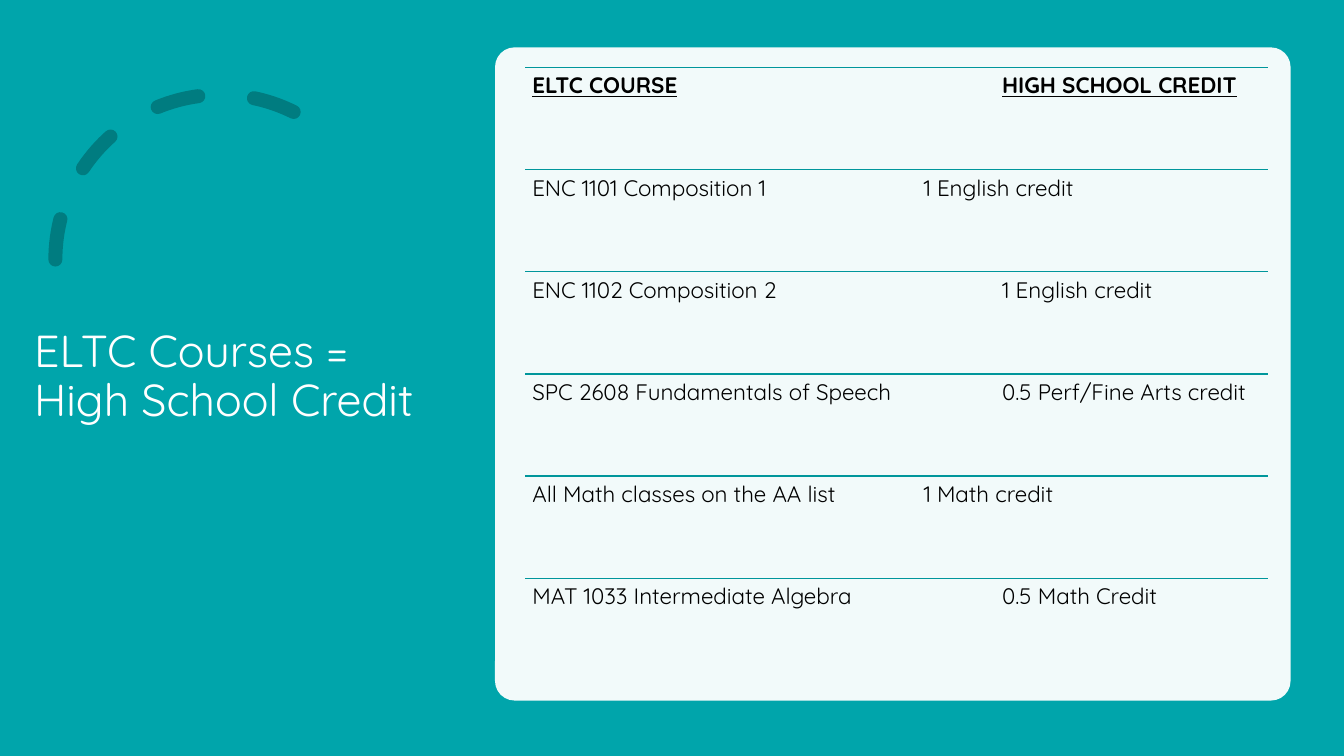
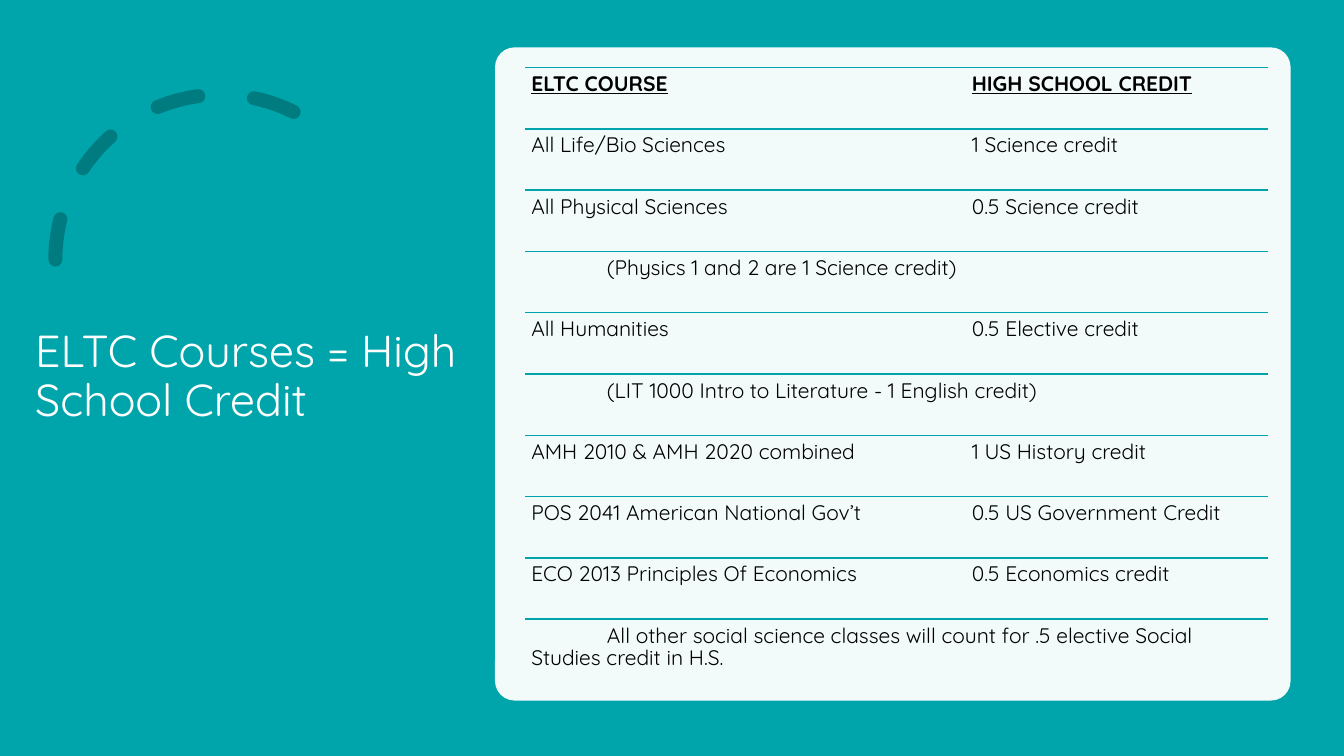
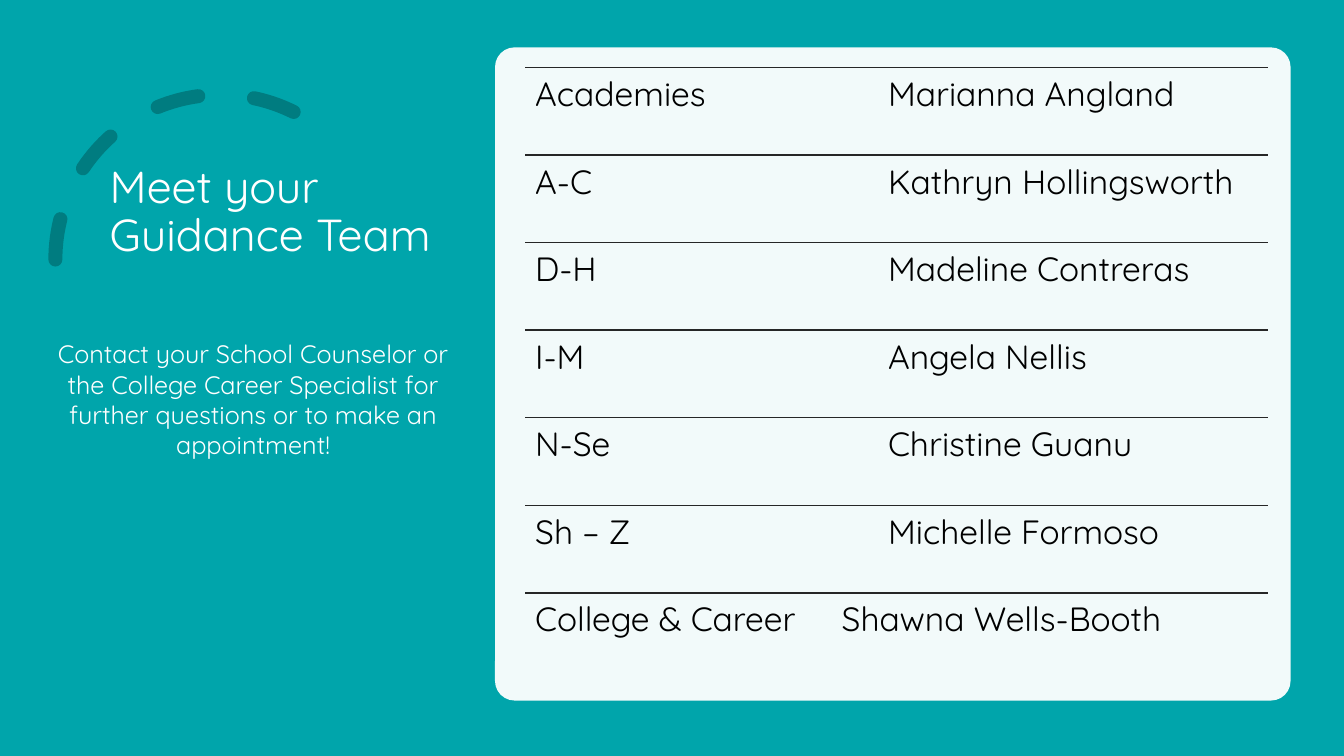
from dataclasses import dataclass

from lxml import etree
from pptx import Presentation
from pptx.dml.color import RGBColor
from pptx.enum.dml import MSO_LINE
from pptx.enum.shapes import MSO_CONNECTOR, MSO_SHAPE
from pptx.enum.text import MSO_ANCHOR, PP_ALIGN
from pptx.oxml.ns import qn
from pptx.util import Inches, Pt

ARC, ROUNDED = MSO_SHAPE.ARC, MSO_SHAPE.ROUNDED_RECTANGLE
STRAIGHT, DASH = MSO_CONNECTOR.STRAIGHT, MSO_LINE.DASH
MIDDLE, TOP = MSO_ANCHOR.MIDDLE, MSO_ANCHOR.TOP
LEFT, CENTER = PP_ALIGN.LEFT, PP_ALIGN.CENTER


@dataclass(frozen=True)
class Theme:
    font: str = "Quicksand"
    teal: RGBColor = RGBColor.from_string("00A5AB")
    dark_teal: RGBColor = RGBColor.from_string("007C80")
    rule_teal: RGBColor = RGBColor.from_string("00969B")
    charcoal: RGBColor = RGBColor.from_string("262626")
    white: RGBColor = RGBColor.from_string("FFFFFF")
    black: RGBColor = RGBColor.from_string("000000")
    title_size: float = 32
    contact_size: float = 18
    line_spacing: float = 0.9


THEME = Theme()
LIST_LEFT, LIST_TOP, LIST_WIDTH, LIST_HEIGHT = 5.21, 0.67, 7.37, 6.08
NOTE_INDENT = 0.75


@dataclass(frozen=True)
class Box:
    left: float
    top: float
    width: float
    height: float

    def lengths(self):
        return tuple(map(Inches, (self.left, self.top, self.width, self.height)))


@dataclass(frozen=True)
class Row:
    """One list entry; column overrides where its second text starts."""
    label: str
    value: str = ""
    column: float | None = None
    header: bool = False
    note: bool = False


@dataclass(frozen=True)
class Page:
    title: str
    title_box: Box
    rows: tuple[Row, ...]
    size: float
    inset: float
    column: float
    rule: RGBColor
    contact: str = ""


HEADER = Row("ELTC COURSE", "HIGH SCHOOL CREDIT", header=True)
COURSES_TITLE = "ELTC Courses = High School Credit"

PAGES = (
    Page(
        COURSES_TITLE, Box(0.24, 0.7, 4.22, 6.09),
        (
            HEADER,
            Row("ENC 1101 Composition 1", "1 English credit", column=3.88),
            Row("ENC 1102 Composition 2", "1 English credit"),
            Row("SPC 2608 Fundamentals of Speech", "0.5 Perf/Fine Arts credit"),
            Row("All Math classes on the AA list", "1 Math credit", column=3.88),
            Row("MAT 1033 Intermediate Algebra", "0.5 Math Credit"),
        ),
        size=16, inset=0.07, column=4.66, rule=THEME.rule_teal,
    ),
    Page(
        COURSES_TITLE, Box(0.25, 0.7, 4.43, 6.09),
        (
            HEADER,
            Row("All Life/Bio Sciences", "1 Science credit"),
            Row("All Physical Sciences", "0.5 Science credit"),
            Row("(Physics 1 and 2 are 1 Science credit)", note=True),
            Row("All Humanities", "0.5 Elective credit"),
            Row("(LIT 1000 Intro to Literature - 1 English credit)", note=True),
            Row("AMH 2010 & AMH 2020 combined", "1 US History credit"),
            Row("POS 2041 American National Gov’t", "0.5 US Government Credit"),
            Row("ECO 2013 Principles Of Economics", "0.5 Economics credit"),
            Row("All other social science classes will count for .5 elective "
                "Social Studies credit in H.S.", note=True),
        ),
        size=15, inset=0.06, column=4.37, rule=THEME.teal,
    ),
    Page(
        "Meet your Guidance Team", Box(0.99, 1.1, 3.77, 2.03),
        (
            Row("Academies", "Marianna Angland"),
            Row("A-C", "Kathryn Hollingsworth"),
            Row("D-H", "Madeline Contreras"),
            Row("I-M", "Angela Nellis"),
            Row("N-Se", "Christine Guanu"),
            Row("Sh – Z", "Michelle Formoso"),
            Row("College & Career", "Shawna Wells-Booth", column=3.04),
        ),
        size=24, inset=0.1, column=3.5, rule=THEME.charcoal,
        contact="Contact your School Counselor or the College Career Specialist "
                "for further questions or to make an appointment!",
    ),
)


def add_text_frame(slide, box: Box, anchor=TOP):
    frame = slide.shapes.add_textbox(*box.lengths()).text_frame
    frame.word_wrap = True
    frame.vertical_anchor = anchor
    return frame


def style_paragraph(paragraph, size: float, color: RGBColor, spacing: float = 1.0) -> None:
    paragraph.line_spacing = spacing
    paragraph.font.name = THEME.font
    paragraph.font.size = Pt(size)
    paragraph.font.color.rgb = color


def add_statement(slide, text: str, box: Box, size: float, spacing: float = 1.0,
                  anchor=TOP, align=LEFT) -> None:
    """Add white text on the teal side of the slide."""
    paragraph = add_text_frame(slide, box, anchor).paragraphs[0]
    paragraph.text = text
    paragraph.alignment = align
    style_paragraph(paragraph, size, THEME.white, spacing)


def add_dashed_arc(slide) -> None:
    arc = slide.shapes.add_shape(ARC, *Box(0.55, 0.94, 3.27, 3.27).lengths())
    arc.shadow.inherit = False
    arc.adjustments[0] = 146.13
    arc.adjustments[1] = 0
    arc.fill.background()
    arc.line.color.rgb = THEME.dark_teal
    arc.line.width = Pt(10)
    arc.line.dash_style = DASH
    properties = arc.element.spPr
    properties.find(qn("a:xfrm")).set("flipH", "1")
    properties.find(qn("a:ln")).set("cap", "rnd")


def add_panel(slide) -> None:
    panel = slide.shapes.add_shape(ROUNDED, *Box(4.91, 0.47, 7.89, 6.48).lengths())
    panel.shadow.inherit = False
    panel.adjustments[0] = 0.03
    panel.fill.solid()
    panel.fill.fore_color.rgb = THEME.white
    panel.line.fill.background()
    color = panel.element.spPr.find(qn("a:solidFill")).find(qn("a:srgbClr"))
    etree.SubElement(color, qn("a:alpha")).set("val", "95000")


def add_rule(slide, top: float, color: RGBColor) -> None:
    rule = slide.shapes.add_connector(
        STRAIGHT, Inches(LIST_LEFT), Inches(top),
        Inches(LIST_LEFT + LIST_WIDTH), Inches(top))
    rule.line.color.rgb = color
    rule.line.width = Pt(1)
    etree.SubElement(rule.element.spPr, qn("a:effectLst"))


def add_tab_stop(paragraph, position: float) -> None:
    properties = paragraph._p.get_or_add_pPr()
    stops = etree.SubElement(properties, qn("a:tabLst"))
    etree.SubElement(stops, qn("a:tab"), pos=str(Inches(position)), algn="l")


def add_row(slide, page: Page, row: Row, top: float, height: float) -> None:
    add_rule(slide, top, page.rule)
    frame = add_text_frame(slide, Box(LIST_LEFT, top, LIST_WIDTH, height))
    frame.margin_left = frame.margin_right = Inches(page.inset)
    frame.margin_top = frame.margin_bottom = Inches(page.inset)
    paragraph = frame.paragraphs[0]
    if row.value:
        add_tab_stop(paragraph, row.column or page.column)
    if row.note:
        paragraph._p.get_or_add_pPr().set("indent", str(Inches(NOTE_INDENT)))
    for text in (row.label, "\t", row.value) if row.value else (row.label,):
        run = paragraph.add_run()
        run.text = text
        if row.header:
            run.font.underline = text != "\t"
    style_paragraph(paragraph, page.size, THEME.black, THEME.line_spacing)
    if row.header:
        paragraph.font.bold = True


def add_page(prs, page: Page) -> None:
    slide = prs.slides.add_slide(prs.slide_layouts[6])
    add_dashed_arc(slide)
    add_statement(slide, page.title, page.title_box, THEME.title_size,
                  THEME.line_spacing, MIDDLE)
    add_panel(slide)
    height = LIST_HEIGHT / len(page.rows)
    for index, row in enumerate(page.rows):
        add_row(slide, page, row, LIST_TOP + index * height, height)
    if page.contact:
        add_statement(slide, page.contact, Box(0.33, 3.31, 4.36, 1.31),
                      THEME.contact_size, align=CENTER)


def main() -> None:
    prs = Presentation()
    prs.slide_width, prs.slide_height = Inches(13.33), Inches(7.5)
    backdrop = prs.slide_master.background.fill
    backdrop.solid()
    backdrop.fore_color.rgb = THEME.teal
    for page in PAGES:
        add_page(prs, page)
    prs.save("out.pptx")


if __name__ == "__main__":
    main()
